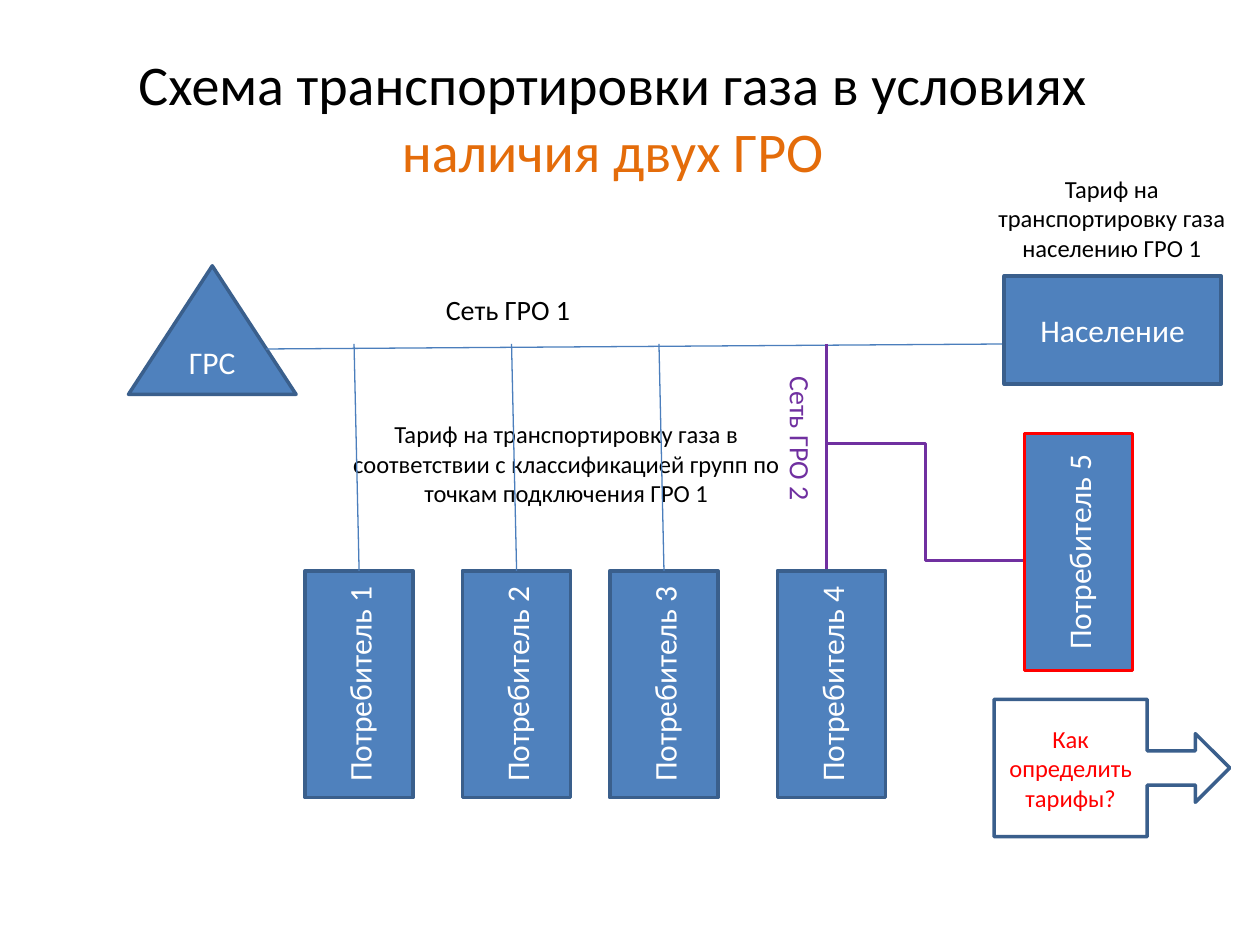
from lxml import etree
from pptx import Presentation
from pptx import util as u
from pptx.dml.color import RGBColor
from pptx.enum import shapes, text
from pptx.oxml import ns

PX = 9144
COLORS = {
    "black": "000000", "white": "FFFFFF", "blue": "4F81BD", "edge": "3A5F8C",
    "wire": "4B7EBC", "purple": "7030A0", "orange": "E46C0A", "red": "FF0000",
}


class Scheme:
    """Draws styled diagram elements on one slide, in px of 1/100 inch."""

    def __init__(self, slide, font="Calibri"):
        self.slide = slide
        self.font = font

    def color(self, name):
        return RGBColor.from_string(COLORS[name])

    def box(self, *lengths):
        return [length * PX for length in lengths]

    def format_run(self, run, size, color):
        run.font.name = self.font
        run.font.size = u.Pt(size)
        run.font.color.rgb = self.color(color)

    def set_wording(self, frame, wording, size, color, align, anchor):
        frame.word_wrap = True
        frame.vertical_anchor = anchor
        frame.text = wording
        paragraph = frame.paragraphs[0]
        paragraph.alignment = align
        self.format_run(paragraph.runs[0], size, color)
        return paragraph

    def label(self, wording, bounds, size=14, color="black", rotation=0,
              align=text.PP_ALIGN.CENTER, anchor=text.MSO_ANCHOR.TOP):
        caption = self.slide.shapes.add_textbox(*self.box(*bounds))
        caption.rotation = rotation
        return self.set_wording(caption.text_frame, wording, size, color, align, anchor)

    def node(self, kind, wording, bounds, size=18, color="white", fill="blue",
             edge="edge", rotation=0):
        node = self.slide.shapes.add_shape(kind, *self.box(*bounds))
        node.shadow.inherit = False
        node.rotation = rotation
        if fill:
            node.fill.solid()
            node.fill.fore_color.rgb = self.color(fill)
        else:
            node.fill.background()
        node.line.color.rgb = self.color(edge)
        node.line.width = u.Pt(2)
        self.set_wording(node.text_frame, wording, size, color,
                         text.PP_ALIGN.CENTER, text.MSO_ANCHOR.MIDDLE)
        return node

    def consumer(self, number, center_x, center_y, length=180, edge="edge"):
        bounds = (center_x - length // 2, center_y - 43, length, 86)
        return self.node(shapes.MSO_SHAPE.RECTANGLE, f"Потребитель {number}",
                         bounds, edge=edge, rotation=270)

    def pipe(self, start, end, color="wire", width=0.75,
             kind=shapes.MSO_CONNECTOR.STRAIGHT, target=None):
        ends = self.box(*start, *end)
        pipe = self.slide.shapes.add_connector(kind, *ends)
        if target is not None:
            pipe.end_connect(target, 3)
            pipe.end_x, pipe.end_y = ends[2:]
        pipe.line.color.rgb = self.color(color)
        pipe.line.width = u.Pt(width)
        properties = pipe._element.find(ns.qn("p:spPr"))
        etree.SubElement(properties, ns.qn("a:effectLst"))


def main():
    deck = Presentation()
    deck.slide_width, deck.slide_height = u.Inches(10), u.Inches(7.5)
    scheme = Scheme(deck.slides.add_slide(deck.slide_layouts[6]))

    title = scheme.label("Схема транспортировки газа в условиях ", (23, 30, 927, 125),
                         size=32, anchor=text.MSO_ANCHOR.MIDDLE)
    highlight = title.add_run()
    highlight.text = "наличия двух ГРО"
    scheme.format_run(highlight, 32, "orange")

    scheme.node(shapes.MSO_SHAPE.ISOSCELES_TRIANGLE, "ГРС", (102, 211, 133, 102))
    scheme.pipe((211, 277), (799, 273))
    scheme.node(shapes.MSO_SHAPE.RECTANGLE, "Население", (797, 219, 172, 86))

    scheme.label("Тариф на транспортировку газа в соответствии с классификацией "
                 "групп по точкам подключения ГРО 1", (266, 328, 367, 81))
    scheme.label("Тариф на транспортировку газа населению ГРО 1", (781, 133, 203, 81))

    for number, center_x in enumerate((285, 410, 527), start=1):
        consumer = scheme.consumer(number, center_x, 543)
        scheme.pipe((center_x - 4, 273), (center_x, 453), target=consumer)

    scheme.pipe((656, 273), (656, 453), "purple", 2)
    scheme.consumer(4, 660, 543)
    scheme.label("Сеть ГРО 1", (344, 227, 172, 37), size=16, align=text.PP_ALIGN.LEFT)
    scheme.label("Сеть ГРО 2", (569, 337, 133, 37), size=16, color="purple",
                 rotation=90, align=text.PP_ALIGN.LEFT)
    scheme.pipe((656, 352), (813, 445), "purple", 2, shapes.MSO_CONNECTOR.ELBOW)
    scheme.consumer(5, 856, 438, length=188, edge="red")
    scheme.node(shapes.MSO_SHAPE.RIGHT_ARROW_CALLOUT, "Как определить тарифы?",
                (789, 555, 187, 109), size=14, color="red", fill=None)

    deck.save("out.pptx")


if __name__ == "__main__":
    main()
